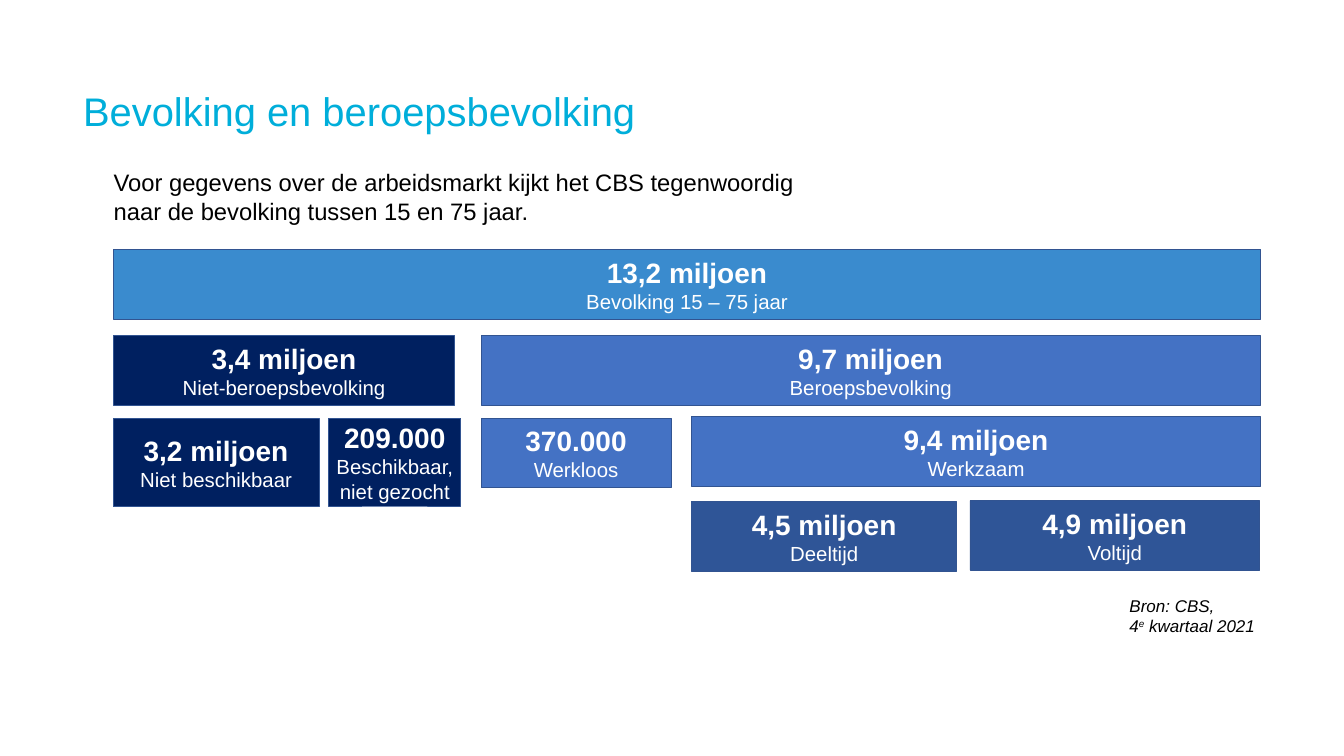
from pptx import Presentation
from pptx.dml.color import RGBColor
from pptx.enum.shapes import MSO_SHAPE
from pptx.enum.text import MSO_ANCHOR, PP_ALIGN
from pptx.util import Inches, Pt

RECTANGLE = MSO_SHAPE.RECTANGLE
TOP, MIDDLE = MSO_ANCHOR.TOP, MSO_ANCHOR.MIDDLE
CENTER = PP_ALIGN.CENTER

FONT = "Arial"
CYAN = RGBColor(0x00, 0xAE, 0xDA)
BLACK = RGBColor(0x00, 0x00, 0x00)
WHITE = RGBColor(0xFF, 0xFF, 0xFF)
SKY = RGBColor(0x3A, 0x8B, 0xCE)
NAVY = RGBColor(0x00, 0x20, 0x60)
BLUE = RGBColor(0x44, 0x72, 0xC4)
STEEL = RGBColor(0x2F, 0x55, 0x97)
OUTLINE = RGBColor(0x32, 0x54, 0x91)

BAR_HEIGHT, TALL_BAR_HEIGHT = 1.14, 1.44
LABOUR_LEFT, WORKING_LEFT = 6.02, 9.47

POPULATION_BARS = [
    (0, 0, 18.78, BAR_HEIGHT, SKY, "13,2 miljoen", "Bevolking 15 – 75 jaar"),
    (0, 1.41, 5.59, BAR_HEIGHT, NAVY, "3,4 miljoen", "Niet-beroepsbevolking"),
    (LABOUR_LEFT, 1.41, 12.75, BAR_HEIGHT, BLUE, "9,7 miljoen", "Beroepsbevolking"),
    (0, 2.77, 3.37, TALL_BAR_HEIGHT, NAVY, "3,2 miljoen", "Niet beschikbaar"),
    (3.53, 2.76, 2.16, TALL_BAR_HEIGHT, NAVY, "209.000", "Beschikbaar, niet gezocht"),
    (LABOUR_LEFT, 2.76, 3.11, BAR_HEIGHT, BLUE, "370.000", "Werkloos"),
    (WORKING_LEFT, 2.74, 9.3, BAR_HEIGHT, BLUE, "9,4 miljoen", "Werkzaam"),
    (WORKING_LEFT, 4.13, 4.33, BAR_HEIGHT, STEEL, "4,5 miljoen", "Deeltijd"),
    (14.02, 4.11, 4.74, BAR_HEIGHT, STEEL, "4,9 miljoen", "Voltijd"),
]


def format_font(font, size, color, bold=False, italic=False):
    font.name = FONT
    font.size = Pt(size)
    font.color.rgb = color
    font.bold = bold
    font.italic = italic


def add_text(slide, left, top, width, height, text, size, color, anchor=TOP, italic=False):
    box = slide.shapes.add_textbox(Inches(left), Inches(top), Inches(width), Inches(height))
    text_frame = box.text_frame
    text_frame.word_wrap = True
    text_frame.vertical_anchor = anchor
    text_frame.margin_left = text_frame.margin_right = 0
    text_frame.margin_top = text_frame.margin_bottom = 0
    text_frame.text = text
    for paragraph in text_frame.paragraphs:
        for run in paragraph.runs:
            format_font(run.font, size, color, italic=italic)
    return text_frame


def add_bar(slide, left, top, width, height, color, amount, label):
    bar = slide.shapes.add_shape(
        RECTANGLE, Inches(left), Inches(top), Inches(width), Inches(height))
    bar.shadow.inherit = False
    bar.fill.solid()
    bar.fill.fore_color.rgb = color
    bar.line.color.rgb = OUTLINE
    bar.line.width = Pt(1)
    text_frame = bar.text_frame
    text_frame.word_wrap = True
    text_frame.vertical_anchor = MIDDLE
    text_frame.text = f"{amount}\n{label}"
    for paragraph, size, bold in zip(text_frame.paragraphs, (33, 24), (True, False)):
        paragraph.alignment = CENTER
        format_font(paragraph.runs[0].font, size, WHITE, bold=bold)


def add_population_chart(slide, left, top):
    for bar_left, bar_top, width, height, color, amount, label in POPULATION_BARS:
        add_bar(slide, left + bar_left, top + bar_top, width, height, color, amount, label)


def add_source(slide, left, top, width, height):
    text_frame = add_text(slide, left, top, width, height, "Bron: CBS,\n4", 20, BLACK, italic=True)
    quarter = text_frame.paragraphs[1]
    for text in ("e", " kwartaal 2021"):
        run = quarter.add_run()
        run.text = text
        format_font(run.font, 20, BLACK, italic=True)
    quarter.runs[1].font._element.set("baseline", "30000")


def main():
    presentation = Presentation()
    presentation.slide_width = Inches(21.99)
    presentation.slide_height = Inches(12.37)
    slide = presentation.slides.add_slide(presentation.slide_layouts[6])
    add_text(slide, 1.36, 1.36, 19.25, 0.91, "Bevolking en beroepsbevolking", 47, CYAN, MIDDLE)
    add_text(slide, 1.86, 2.75, 11.92, 1.11,
             "Voor gegevens over de arbeidsmarkt kijkt het CBS tegenwoordig "
             "naar de bevolking tussen 15 en 75 jaar.", 28, BLACK)
    add_population_chart(slide, 1.85, 4.08)
    add_source(slide, 18.48, 9.74, 2.14, 0.74)
    presentation.save("out.pptx")


if __name__ == "__main__":
    main()
